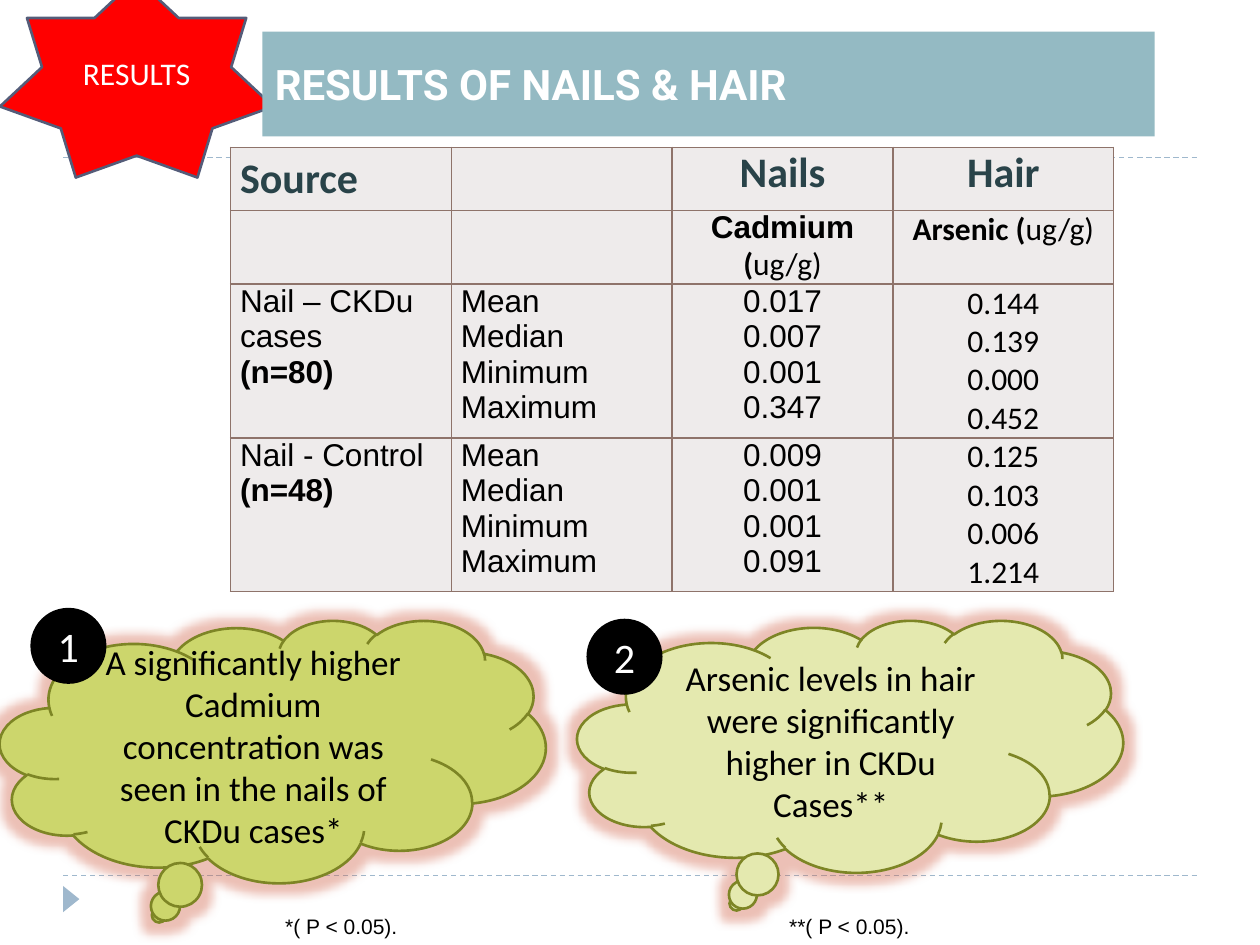
from dataclasses import dataclass

from lxml import etree
from pptx import Presentation
from pptx.dml.color import RGBColor
from pptx.enum.dml import MSO_LINE
from pptx.enum.shapes import MSO_CONNECTOR, MSO_SHAPE
from pptx.enum.text import MSO_ANCHOR, PP_ALIGN
from pptx.oxml.ns import qn
from pptx.util import Cm, Pt

LEFT, CENTER = PP_ALIGN.LEFT, PP_ALIGN.CENTER
TOP, MIDDLE = MSO_ANCHOR.TOP, MSO_ANCHOR.MIDDLE
DASH = MSO_LINE.DASH
STRAIGHT = MSO_CONNECTOR.STRAIGHT
RECT, STAR, CLOUD = MSO_SHAPE.RECTANGLE, MSO_SHAPE.STAR_7_POINT, MSO_SHAPE.CLOUD_CALLOUT
OVAL, TRIANGLE = MSO_SHAPE.OVAL, MSO_SHAPE.ISOSCELES_TRIANGLE


@dataclass(frozen=True)
class Theme:
    body: str = "Calibri"
    data: str = "Arial"
    heading: str = "Roboto"
    black: str = "000000"
    white: str = "FFFFFF"
    rule: str = "9FB8CD"
    star: str = "FF0000"
    star_line: str = "545C79"
    banner: str = "94BAC3"
    table_head: str = "294349"
    table_fill: str = "EEEBEB"
    table_line: str = "8E736A"
    cloud_line: str = "7D8525"
    cloud_dark: str = "CCD66C"
    cloud_light: str = "E4E9AF"
    glow: str = "D16349"
    large: int = 24
    medium: int = 20
    normal: int = 18
    small: int = 12


T = Theme()


@dataclass(frozen=True)
class Style:
    font: str
    size: int
    color: str = T.black
    bold: bool = False
    align: PP_ALIGN = CENTER


@dataclass(frozen=True)
class Para:
    """A bold lead, if any, followed by plain text in the same style."""
    text: str
    style: Style
    lead: str = ""


@dataclass(frozen=True)
class Box:
    x: float
    y: float
    w: float
    h: float

    def cm(self) -> tuple:
        return Cm(self.x), Cm(self.y), Cm(self.w), Cm(self.h)


@dataclass(frozen=True)
class Finding:
    number: str
    cloud: Box
    badge: Box
    fill: str
    lines: tuple


HEAD = Style(T.body, T.large, T.table_head, True)
HEAD_LEFT = Style(T.body, T.large, T.table_head, True, LEFT)
UNIT = Style(T.body, T.normal)
METAL = Style(T.data, T.normal, bold=True)
LABEL = Style(T.data, T.normal, align=LEFT)
COUNT = Style(T.data, T.normal, bold=True, align=LEFT)
NAIL = Style(T.data, T.normal)
CLOUD_TEXT = Style(T.body, T.medium)
BADGE_TEXT = Style(T.body, T.large, T.white)
NOTE = Style(T.data, T.small, align=LEFT)


def column(style: Style, *texts: str) -> list[Para]:
    return [Para(text, style) for text in texts]


STATS = column(LABEL, "Mean", "Median", "Minimum", "Maximum")
ROWS = [
    [column(HEAD_LEFT, "Source"), [], column(HEAD, "Nails"), column(HEAD, "Hair")],
    [[], [], [Para("Cadmium", METAL), Para("ug/g)", UNIT, "(")],
     [Para("ug/g)", UNIT, "Arsenic (")]],
    [[Para("Nail – CKDu cases", LABEL), Para("(n=80)", COUNT)], STATS,
     column(NAIL, "0.017", "0.007", "0.001", "0.347"),
     column(UNIT, "0.144", "0.139", "0.000", "0.452")],
    [[Para("Nail - Control", LABEL), Para("(n=48)", COUNT)], STATS,
     column(NAIL, "0.009", "0.001", "0.001", "0.091"),
     column(UNIT, "0.125", "0.103", "0.006", "1.214")],
]
ROW_HEIGHTS = (1.27, 1.3, 2.59, 2.59)
COLUMN_WIDTH = 4.45

FINDINGS = [
    Finding("2", Box(11.64, 12.5, 11, 5.08), Box(11.85, 12.5, 1.48, 1.48), T.cloud_light,
            ("Arsenic levels in hair were significantly higher in CKDu", "Cases**")),
    Finding("1", Box(0, 12.5, 11, 5.29), Box(0.64, 12.28, 1.48, 1.48), T.cloud_dark,
            ("A significantly higher Cadmium concentration was seen in the nails of "
             "CKDu cases*",)),
]


def rgb(color: str) -> RGBColor:
    return RGBColor.from_string(color)


def write(tf, paras: list[Para]) -> None:
    for i, para in enumerate(paras):
        p = tf.paragraphs[0] if i == 0 else tf.add_paragraph()
        style = para.style
        p.alignment = style.align
        p.font.name, p.font.size = style.font, Pt(style.size)
        p.font.bold = style.bold
        p.font.color.rgb = rgb(style.color)
        if para.lead:
            r = p.add_run()
            r.text, r.font.bold = para.lead, True
        p.add_run().text = para.text


def add_shape(slide, kind, box: Box, fill: str, line: str = "", paras=()):
    sp = slide.shapes.add_shape(kind, *box.cm())
    sp.shadow.inherit = False
    sp.fill.solid()
    sp.fill.fore_color.rgb = rgb(fill)
    if line:
        sp.line.color.rgb = rgb(line)
        sp.line.width = Pt(1.5)
    else:
        sp.line.fill.background()
    sp.text_frame.vertical_anchor = MIDDLE
    write(sp.text_frame, paras)
    return sp


def add_rule(slide, y: float) -> None:
    line = slide.shapes.add_connector(STRAIGHT, Cm(1.27), Cm(y), Cm(24.13), Cm(y))
    line.line.color.rgb = rgb(T.rule)
    line.line.width = Pt(0.75)
    line.line.dash_style = DASH
    etree.SubElement(line._element.spPr, qn("a:effectLst"))


def add_glow(sp) -> None:
    effects = sp._element.spPr.find(qn("a:effectLst"))
    glow = etree.SubElement(effects, qn("a:glow"), rad=str(Pt(11)))
    color = etree.SubElement(glow, qn("a:srgbClr"), val=T.glow)
    etree.SubElement(color, qn("a:alpha"), val="40000")


def add_borders(cell) -> None:
    props = cell._tc.get_or_add_tcPr()
    for side in ("a:lnL", "a:lnR", "a:lnT", "a:lnB"):
        ln = etree.SubElement(props, qn(side), w=str(Pt(1)))
        fill = etree.SubElement(ln, qn("a:solidFill"))
        etree.SubElement(fill, qn("a:srgbClr"), val=T.table_line)


def add_results_table(slide) -> None:
    box = Box(4.65, 2.97, COLUMN_WIDTH * len(ROWS[0]), sum(ROW_HEIGHTS))
    table = slide.shapes.add_table(len(ROWS), len(ROWS[0]), *box.cm()).table
    table.first_row = table.horz_banding = False
    for col in table.columns:
        col.width = Cm(COLUMN_WIDTH)
    for i, (row, height) in enumerate(zip(ROWS, ROW_HEIGHTS)):
        table.rows[i].height = Cm(height)
        for j, paras in enumerate(row):
            cell = table.cell(i, j)
            cell.margin_left = cell.margin_right = Cm(0.19)
            cell.margin_top = cell.margin_bottom = 0
            cell.vertical_anchor = MIDDLE if (i, j) == (0, 0) else TOP
            add_borders(cell)
            cell.fill.solid()
            cell.fill.fore_color.rgb = rgb(T.table_fill)
            write(cell.text_frame, paras)


def add_note(slide, x: float, text: str) -> None:
    tf = slide.shapes.add_textbox(Cm(x), Cm(18.29), Cm(3.81), Cm(0.77)).text_frame
    tf.word_wrap = True
    write(tf, [Para(text, NOTE)])


def main() -> None:
    prs = Presentation()
    prs.slide_width, prs.slide_height = Cm(25.4), Cm(19.05)
    slide = prs.slides.add_slide(prs.slide_layouts[6])
    for y in (17.65, 3.17):
        add_rule(slide, y)
    add_shape(slide, TRIANGLE, Box(1.17, 17.96, 0.53, 0.33), T.rule).rotation = 90
    add_shape(slide, STAR, Box(0, -0.43, 5.51, 4.01), T.star, T.star_line,
              [Para("RESULTS", Style(T.body, T.normal, T.white))])
    add_shape(slide, RECT, Box(5.29, 0.64, 17.99, 2.11), T.banner, "",
              [Para("RESULTS OF NAILS & HAIR", Style(T.heading, T.large, T.white, True, LEFT))])
    add_results_table(slide)
    for f in FINDINGS:
        add_glow(add_shape(slide, CLOUD, f.cloud, f.fill, T.cloud_line,
                           column(CLOUD_TEXT, *f.lines)))
        add_shape(slide, OVAL, f.badge, T.black, T.black, [Para(f.number, BADGE_TEXT)])
    add_note(slide, 5.5, "*( P < 0.05).")
    add_note(slide, 15.66, "**( P < 0.05).")
    prs.save("out.pptx")


if __name__ == "__main__":
    main()
